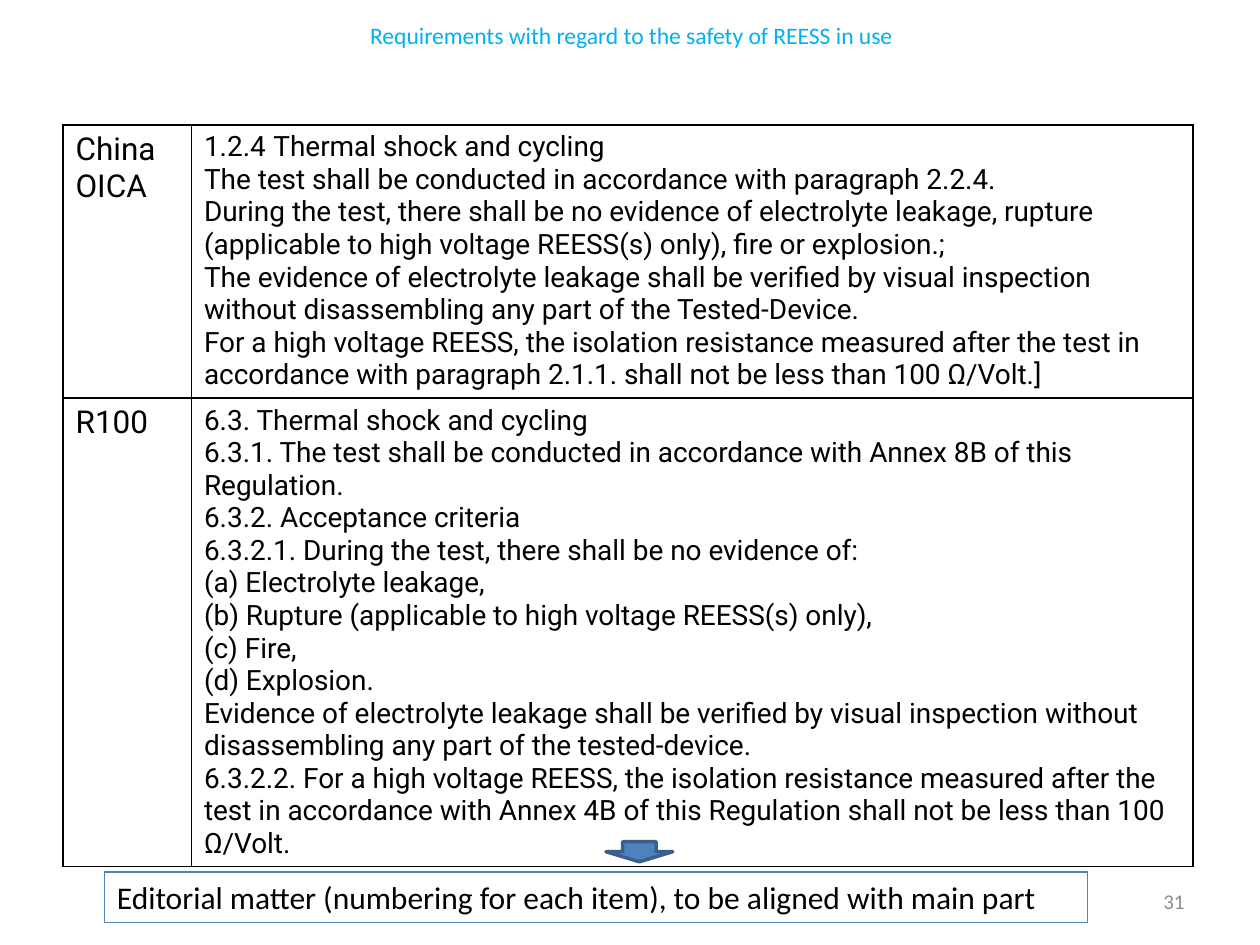
from lxml.etree import SubElement
from pptx import Presentation
from pptx.dml.color import RGBColor
from pptx.enum.shapes import MSO_SHAPE
from pptx.enum.text import MSO_ANCHOR, MSO_AUTO_SIZE, PP_ALIGN
from pptx.oxml.ns import qn
from pptx.util import Inches, Pt

COLORS = {"black": "000000", "title": "00B0F0", "number": "8C8C8C",
          "blue": "4F81BD", "outline": "3A5F8C"}


def rgb(name):
    return RGBColor.from_string(COLORS[name])


def write(tf, lines, font, size, color, align=PP_ALIGN.LEFT):
    tf.word_wrap = True
    tf.text = "\n".join(lines)
    for p in tf.paragraphs:
        p.alignment = align
        p.font.name = font
        p.font.size = Pt(size)
        p.font.bold = False
        p.font.color.rgb = rgb(color)


prs = Presentation()
prs.slide_width, prs.slide_height = Inches(10), Inches(7.5)
s = prs.slides.add_slide(prs.slide_layouts[6])

# Comparison table: source of the text, requirement
rows = [
    (2.17, ["China", "OICA"], [
        "1.2.4\t Thermal shock and cycling",
        "The test shall be conducted in accordance with paragraph 2.2.4.",
        "During the test, there shall be no evidence of electrolyte leakage, rupture "
        "(applicable to high voltage REESS(s) only), fire or explosion.;",
        "The evidence of electrolyte leakage shall be verified by visual inspection "
        "without disassembling any part of the Tested-Device.",
        "For a high voltage REESS, the isolation resistance measured after the test in "
        "accordance with paragraph 2.1.1. shall not be less than 100 Ω/Volt.]",
    ]),
    (3.71, ["R100"], [
        "6.3. Thermal shock and cycling",
        "6.3.1. The test shall be conducted in accordance with Annex 8B of this Regulation.",
        "6.3.2. Acceptance criteria",
        "6.3.2.1. During the test, there shall be no evidence of:",
        "(a) Electrolyte leakage,",
        "(b) Rupture (applicable to high voltage REESS(s) only),",
        "(c) Fire,",
        "(d) Explosion.",
        "Evidence of electrolyte leakage shall be verified by visual inspection without "
        "disassembling any part of the tested-device.",
        "6.3.2.2. For a high voltage REESS, the isolation resistance measured after the "
        "test in accordance with Annex 4B of this Regulation shall not be less than 100 "
        "Ω/Volt.",
    ]),
]
table = s.shapes.add_table(len(rows), 2, Inches(0.5), Inches(0.99),
                           Inches(8.97), Inches(5.88)).table
table.first_row = table.horz_banding = False
table.columns[0].width = Inches(1.02)
table.columns[1].width = Inches(7.95)
for i, (height, source, requirement) in enumerate(rows):
    table.rows[i].height = Inches(height)
    for j, (lines, size) in enumerate([(source, 18), (requirement, 16)]):
        cell = table.cell(i, j)
        write(cell.text_frame, lines, "Roboto", size, "black")
        tcPr = cell._tc.get_or_add_tcPr()
        for side in ("lnL", "lnR", "lnT", "lnB"):
            ln = SubElement(tcPr, qn(f"a:{side}"), w=str(Pt(1)))
            fill = SubElement(ln, qn("a:solidFill"))
            SubElement(fill, qn("a:srgbClr"), val=COLORS["black"])
        cell.fill.background()

# Slide number and title
for box, text, size, color, align in [
    ((7.17, 6.95, 2.33, 0.4), "31", 12, "number", PP_ALIGN.RIGHT),
    ((0.51, 0.13, 9, 0.3), "Requirements with regard to the safety of REESS in use",
     13.5, "title", PP_ALIGN.CENTER),
]:
    tf = s.shapes.add_textbox(*map(Inches, box)).text_frame
    tf.vertical_anchor = MSO_ANCHOR.MIDDLE
    write(tf, [text], "Calibri", size, color, align)

# Arrow down to the conclusion
arrow = s.shapes.add_shape(MSO_SHAPE.DOWN_ARROW, Inches(4.81), Inches(6.68),
                           Inches(0.53), Inches(0.16))
arrow.shadow.inherit = False
arrow.fill.solid()
arrow.fill.fore_color.rgb = rgb("blue")
arrow.line.color.rgb = rgb("outline")
arrow.line.width = Pt(2)

# Conclusion
sp = s.shapes.add_textbox(Inches(0.83), Inches(6.92), Inches(7.8), Inches(0.4))
sp.line.color.rgb = rgb("blue")
sp.line.width = Pt(0.75)
write(sp.text_frame,
      ["Editorial matter (numbering for each item), to be aligned with main part"],
      "Calibri", 18, "black")
sp.text_frame.auto_size = MSO_AUTO_SIZE.SHAPE_TO_FIT_TEXT

prs.save("out.pptx")
